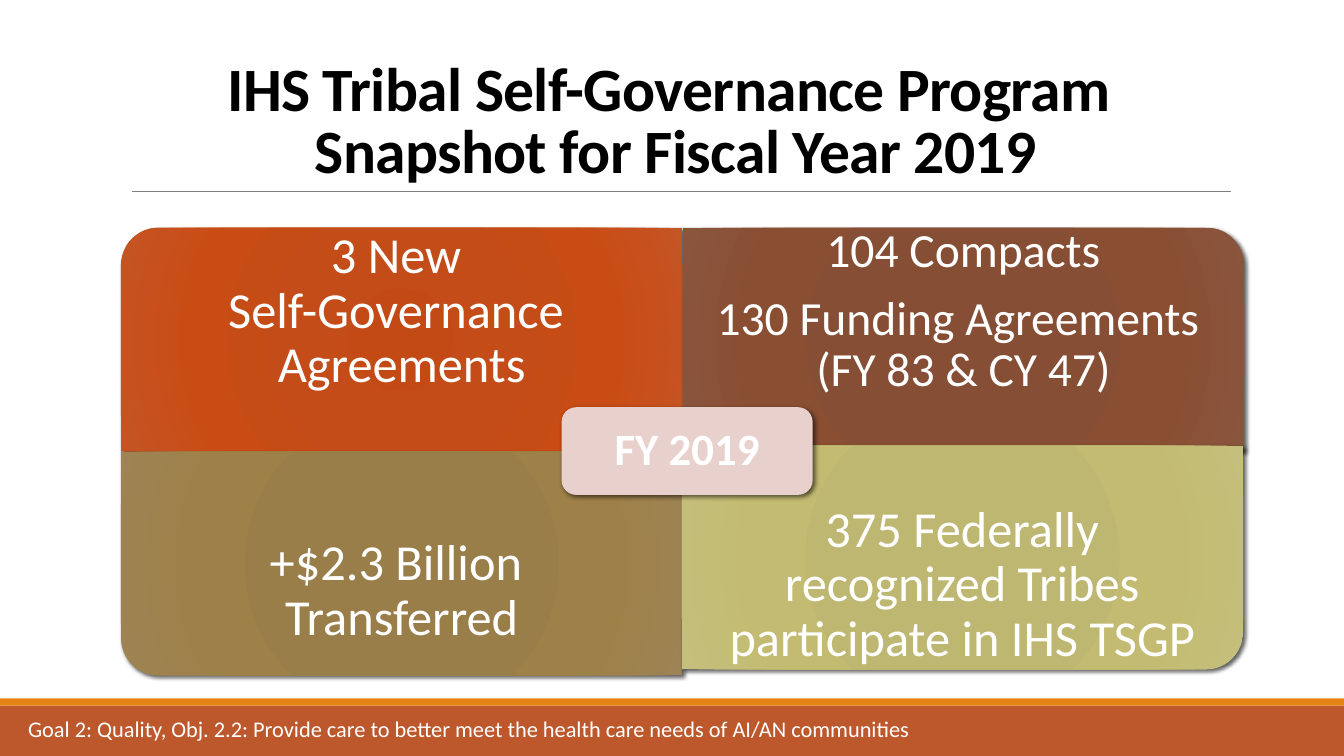
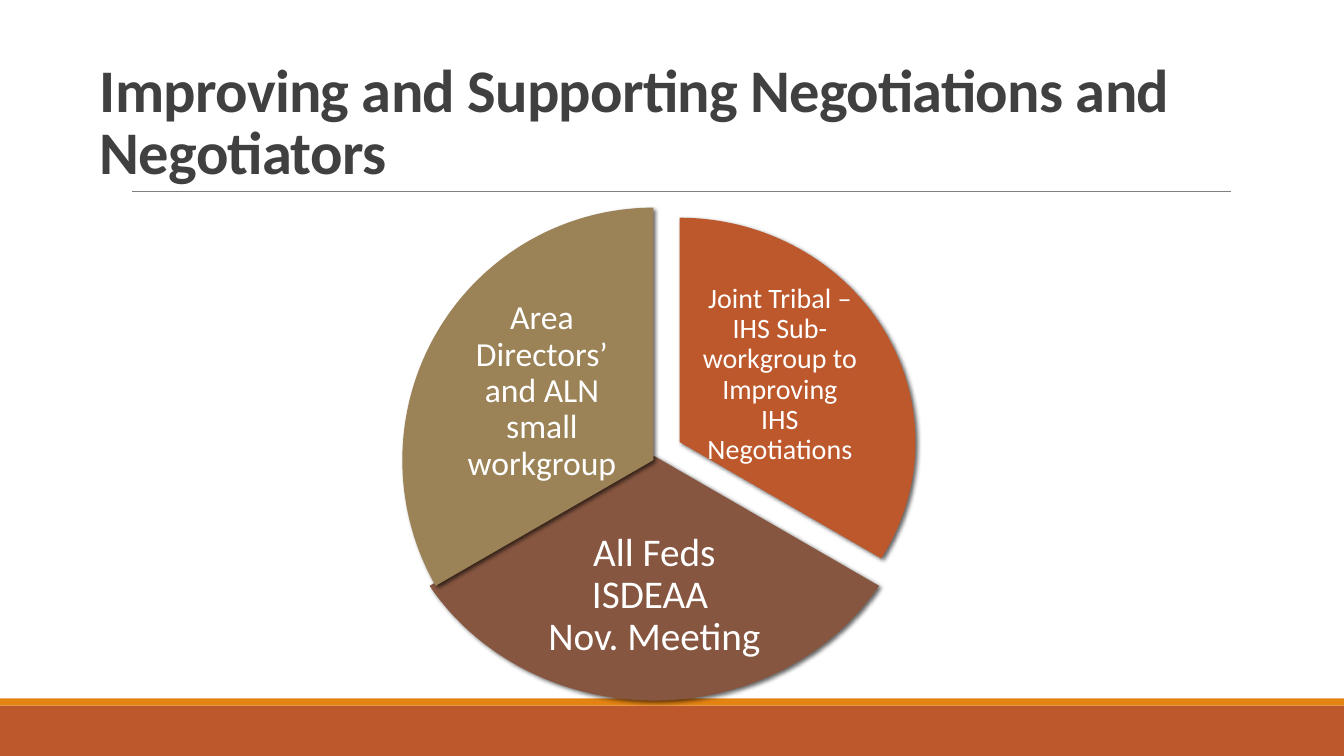
from lxml.etree import SubElement
from pptx import Presentation
from pptx.dml.color import RGBColor
from pptx.enum.shapes import MSO_CONNECTOR, MSO_SHAPE
from pptx.enum.text import MSO_ANCHOR, MSO_AUTO_SIZE, PP_ALIGN
from pptx.oxml import parse_xml
from pptx.oxml.ns import nsdecls, qn
from pptx.util import Inches, Pt

FONT = "Calibri"
WHITE = "FFFFFF"
RUST, BROWN, TAN = "BD582C", "865640", "9B8357"
ORANGE, GREY, BLUSH = "E48312", "808080", "E8D1CD"
STOPS = (0, 34, 70, 100)


def rgb(code):
    """Turn a hex string into a colour."""
    return RGBColor.from_string(code)


def place(box):
    """Turn a box in inches into lengths."""
    return [Inches(n) for n in box]


def style(par, size, color, bold=False):
    """Format all runs of a paragraph."""
    for run in par.runs:
        font = run.font
        font.name, font.size, font.bold = FONT, Pt(size), bold
        font.color.rgb = rgb(color)


def block(slide, kind, box, color):
    """Add a plain filled shape without outline."""
    shape = slide.shapes.add_shape(kind, *place(box))
    shape.shadow.inherit = False
    shape.fill.solid()
    shape.fill.fore_color.rgb = rgb(color)
    shape.line.fill.background()
    return shape


def shade(shape, blur=3):
    """Give a shape a soft shadow to the lower right."""
    effect = shape.element.spPr.find(qn("a:effectLst"))
    outer = SubElement(effect, qn("a:outerShdw"), blurRad=str(Pt(blur)),
                       dist=str(Pt(2)), dir="2700000", rotWithShape="0")
    black = SubElement(outer, qn("a:srgbClr"), val="000000")
    SubElement(black, qn("a:alpha"), val="60000")


def blend(shape, colors):
    """Replace a plain fill by a round gradient."""
    stops = "".join(
        f'<a:gs pos="{pos * 1000}"><a:srgbClr val="{color}"/></a:gs>'
        for pos, color in zip(STOPS, colors))
    edge = " ".join(f'{side}="100000"' for side in "ltrb")
    grad = parse_xml(
        f'<a:gradFill {nsdecls("a")} rotWithShape="1"><a:gsLst>{stops}</a:gsLst>'
        f'<a:path path="circle"><a:fillToRect {edge}/></a:path></a:gradFill>')
    props = shape.element.spPr
    props.replace(props.find(qn("a:solidFill")), grad)


def write(shape, lines, size, pad, bold=False):
    """Set centred white paragraphs in a shape."""
    frame = shape.text_frame
    frame.word_wrap = True
    frame.vertical_anchor = MSO_ANCHOR.MIDDLE
    frame.margin_left = frame.margin_right = Inches(pad)
    frame.margin_top = frame.margin_bottom = Inches(pad)
    for i, line in enumerate(lines):
        par = frame.add_paragraph() if i else frame.paragraphs[0]
        par.text = line
        par.alignment = PP_ALIGN.CENTER
        par.line_spacing = 0.9
        par.space_after = Pt(0.35 * size)
        style(par, size, WHITE, bold)


def label(slide, box, lines, size, pad):
    """Add a text box with centred white text."""
    write(slide.shapes.add_textbox(*place(box)), lines, size, pad)


def base(deck, title, box, size, color, align):
    """Add a slide with bands, rule and title."""
    slide = deck.slides.add_slide(deck.slide_layouts[5])
    block(slide, MSO_SHAPE.RECTANGLE, (0, 7, 13.33, 0.5), RUST)
    block(slide, MSO_SHAPE.RECTANGLE, (0, 6.93, 13.33, 0.07), ORANGE)
    rule = slide.shapes.add_connector(
        MSO_CONNECTOR.STRAIGHT, *place((1.31, 1.9, 12.21, 1.9)))
    rule.line.color.rgb = rgb(GREY)
    rule.line.width = Pt(0.5)
    SubElement(rule.element.spPr, qn("a:effectLst"))
    head = slide.shapes.title
    head.left, head.top, head.width, head.height = place(box)
    frame = head.text_frame
    frame.word_wrap = True
    frame.auto_size = MSO_AUTO_SIZE.NONE
    frame.vertical_anchor = MSO_ANCHOR.BOTTOM
    par = frame.paragraphs[0]
    par.text = title
    par.alignment = align
    par.line_spacing = 0.85
    style(par, size, color, True)
    for run in par.runs:
        run.font._element.set("spc", "-50")
    return slide


def tile(slide, box, turn, colors, lines, size, pad):
    """Add a tile with one round corner and its text."""
    left, top, wide, high = box
    across, down = (high, wide) if turn % 180 else (wide, high)
    spot = (left + (wide - across) / 2, top + (high - down) / 2, across, down)
    shape = block(slide, MSO_SHAPE.ROUND_1_RECTANGLE, spot, colors[0])
    shape.rotation = turn
    blend(shape, colors)
    shade(shape)
    drop = high / 4 if turn in (90, 180) else 0
    label(slide, (left, top + drop, wide, high * 0.75), lines, size, pad)


def matrix(slide, box):
    """Draw four tiles around a centre badge."""
    left, top, wide, high = box
    half, row = wide / 2, high / 2
    tiles = (
        (0, 0, 270, ("C44A15", "C34C18", "C94C15", "C45525"),
         ["3 New \nSelf-Governance \nAgreements"], 36, 0.28),
        (half, 0, 0, ("874C32", "864E34", "8A4E33", "8A553D"),
         ["104 Compacts", "130 Funding Agreements \n(FY 83 & CY 47)"], 34, 0.26),
        (0, row, 180, ("9A7D48", "9A7E4A", "9E8049", "9E8454"),
         ["+$2.3 Billion \nTransferred"], 36, 0.28),
        (half - 0.01, row - 0.06, 90, ("BEB76E", "BEB771", "C3BB71", "C5BF7D"),
         ["375 Federally recognized Tribes participate in IHS TSGP"], 36, 0.28),
    )
    for x, y, *rest in tiles:
        tile(slide, (left + x, top + y, half, row), *rest)
    spot = (left + half - 1.2, top + row - 0.44, 2.49, 0.87)
    badge = block(slide, MSO_SHAPE.ROUNDED_RECTANGLE, spot, BLUSH)
    shade(badge, 3.5)
    write(badge, ["FY 2019"], 32, 0.13, True)


def footer(slide, box, text):
    """Write the goal on the bottom band."""
    frame = slide.shapes.add_textbox(*place(box)).text_frame
    frame.word_wrap = True
    frame.text = text
    style(frame.paragraphs[0], 16, WHITE)


def wheel(slide, box):
    """Draw three pie slices with their texts."""
    left, top = box[:2]
    slices = (
        ((0.54, 0.1, 4.68, 4.45), (162, 18), RUST, (3.08, 0.92, 1.59, 1.48),
         "Joint Tribal – IHS Sub-workgroup to Improving IHS Negotiations", 20),
        ((0, 0.04, 5.26, 4.85), (18, 90), BROWN, (1.44, 3.1, 2.38, 1.5),
         "All Feds ISDEAA \nNov. Meeting", 28),
        ((0.13, 0, 4.98, 5.01), (90, 162), TAN, (0.67, 0.99, 1.69, 1.67),
         "Area Directors’ and ALN small workgroup", 24),
    )
    for (x, y, w, h), arc, color, (tx, ty, tw, th), text, size in slices:
        pie = block(slide, MSO_SHAPE.PIE, (left + x, top + y, w, h), color)
        pie.adjustments[0], pie.adjustments[1] = arc
        shade(pie)
        label(slide, (left + tx, top + ty, tw, th), [text], size, 0.03)


def main():
    """Build and save the deck."""
    deck = Presentation()
    deck.slide_width, deck.slide_height = Inches(13.33), Inches(7.5)
    snap = base(
        deck, "IHS Tribal Self-Governance Program \nSnapshot for Fiscal Year 2019",
        (1.2, 0.31, 11, 1.59), 44, "000000", PP_ALIGN.CENTER)
    matrix(snap, (1.2, 2.26, 11.14, 4.44))
    footer(snap, (0.18, 7.05, 11.82, 0.37),
           "Goal 2: Quality, Obj. 2.2: Provide care to better meet the "
           "health care needs of AI/AN communities")
    talks = base(
        deck, "Improving and Supporting Negotiations and Negotiators",
        (0.89, 0.79, 12.17, 1.11), 43.2, "404040", PP_ALIGN.LEFT)
    wheel(talks, (3.86, 2.06, 5.26, 5.01))
    deck.save("out.pptx")


if __name__ == "__main__":
    main()
